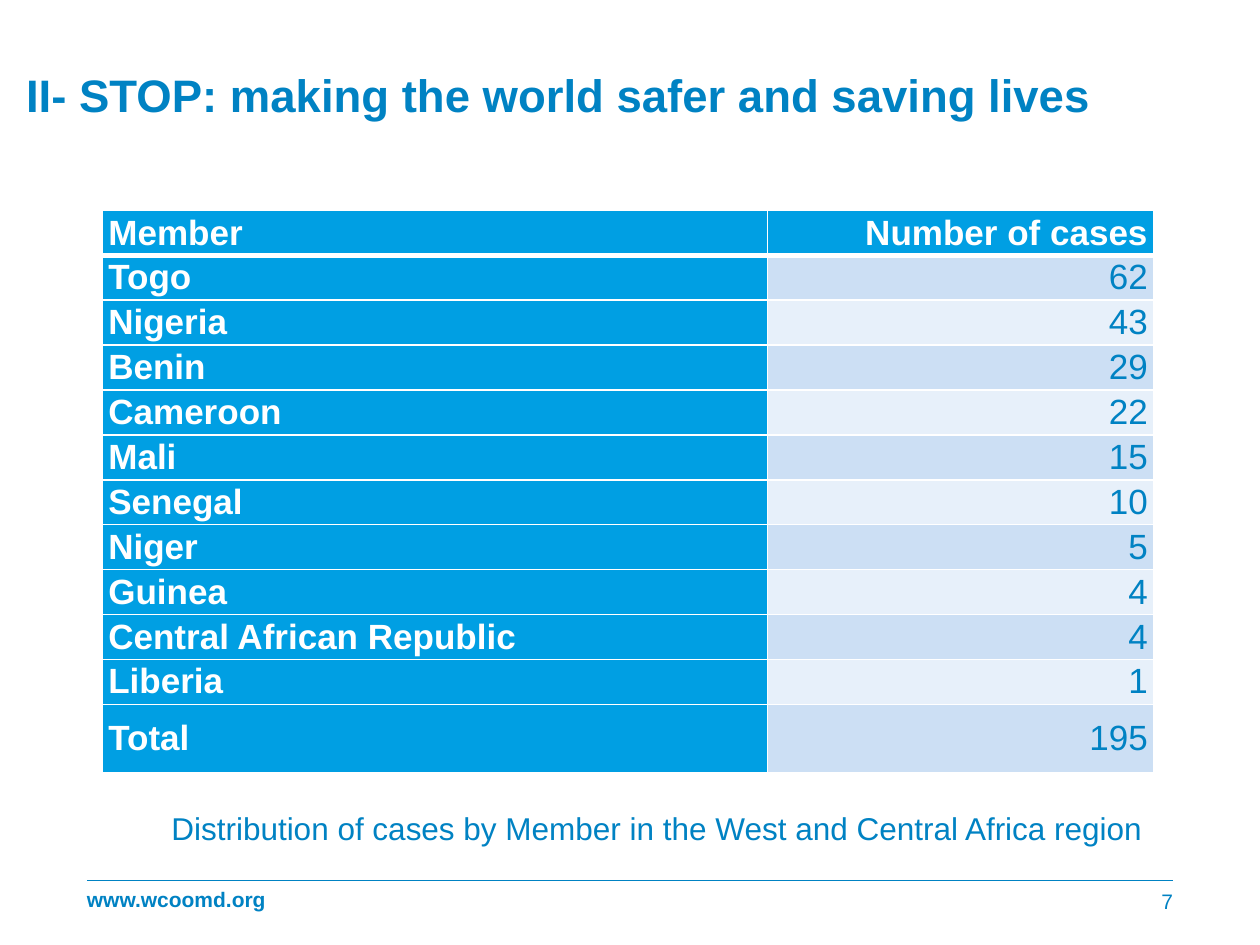
from lxml.etree import SubElement
from pptx import Presentation
from pptx.dml.color import RGBColor
from pptx.enum.shapes import MSO_CONNECTOR
from pptx.enum.text import MSO_ANCHOR, PP_ALIGN
from pptx.oxml import parse_xml
from pptx.oxml.ns import nsdecls, qn
from pptx.util import Inches, Pt

TITLE = "II- STOP: making the world safer and saving lives"
CAPTION = "Distribution of cases by Member in the West and Central Africa region"
WEBSITE = "www.wcoomd.org"
PAGE = "7"
HEADINGS = ("Member", "Number of cases")
CASES = [
    ("Togo", 62),
    ("Nigeria", 43),
    ("Benin", 29),
    ("Cameroon", 22),
    ("Mali", 15),
    ("Senegal", 10),
    ("Niger", 5),
    ("Guinea", 4),
    ("Central African Republic", 4),
    ("Liberia", 1),
]

BLUE = RGBColor(0x00, 0x82, 0xC3)
BRIGHT = RGBColor(0x00, 0x9F, 0xE3)
BAND_DARK = RGBColor(0xCC, 0xDF, 0xF4)
BAND_LIGHT = RGBColor(0xE7, 0xF0, 0xFA)
WHITE = RGBColor(0xFF, 0xFF, 0xFF)

WIDTH, HEIGHT = 10, 7.5
MARGIN = 0.69
FOOTER_TOP, FOOTER_HEIGHT, RULE_TOP = 6.95, 0.4, 6.99
TABLE_LEFT, TABLE_TOP, TABLE_HEIGHT = 0.81, 1.67, 4.46
COLUMNS = (5.28, 3.07)
TOTAL_HEIGHT = 0.54


def write(holder, text, size=12, color=BLUE, bold=False, align=PP_ALIGN.LEFT,
          anchor=MSO_ANCHOR.MIDDLE, insets=(0.1, 0.05, 0.1, 0.05), spacing=None):
    frame = holder.text_frame
    target = frame if hasattr(frame, "margin_left") and not hasattr(holder, "margin_left") else holder
    target.margin_left, target.margin_top, target.margin_right, target.margin_bottom = map(Inches, insets)
    target.vertical_anchor = anchor
    frame.word_wrap = True
    paragraph = frame.paragraphs[0]
    paragraph.alignment = align
    if spacing:
        paragraph.line_spacing = spacing
    run = paragraph.add_run()
    run.text = text
    run.font.name = "Arial"
    run.font.size = Pt(size)
    run.font.bold = bold
    run.font.color.rgb = color


def add_text(slide, box, text, **look):
    write(slide.shapes.add_textbox(*map(Inches, box)), text, **look)


def add_borders(cell, top, bottom):
    properties = cell._tc.get_or_add_tcPr()
    for position, (side, points) in enumerate((("L", 1), ("R", 1), ("T", top), ("B", bottom))):
        properties.insert(position, parse_xml(
            f'<a:ln{side} {nsdecls("a")} w="{Pt(points)}"><a:solidFill>'
            f'<a:srgbClr val="{WHITE}"/></a:solidFill></a:ln{side}>'))


def add_case_table(slide):
    rows = [HEADINGS, *CASES, ("Total", sum(count for _, count in CASES))]
    table = slide.shapes.add_table(
        len(rows), len(COLUMNS), Inches(TABLE_LEFT), Inches(TABLE_TOP),
        Inches(sum(COLUMNS)), Inches(TABLE_HEIGHT)).table
    for column, width in zip(table.columns, COLUMNS):
        column.width = Inches(width)
    row_height = (TABLE_HEIGHT - TOTAL_HEIGHT) / (len(rows) - 1)
    for r, values in enumerate(rows):
        table.rows[r].height = Inches(TOTAL_HEIGHT if r == len(rows) - 1 else row_height)
        for c, value in enumerate(values):
            cell = table.cell(r, c)
            heading = r == 0 or c == 0
            cell.fill.solid()
            cell.fill.fore_color.rgb = BRIGHT if heading else BAND_DARK if r % 2 else BAND_LIGHT
            add_borders(cell, top=3 if r == 1 else 1, bottom=3 if r == 0 else 1)
            write(cell, str(value), size=20, bold=heading, color=WHITE if heading else BLUE,
                  align=PP_ALIGN.RIGHT if c else PP_ALIGN.LEFT, insets=(0.05, 0, 0.05, 0))


def add_footer(slide):
    rule = slide.shapes.add_connector(
        MSO_CONNECTOR.STRAIGHT, Inches(MARGIN), Inches(RULE_TOP),
        Inches(WIDTH - MARGIN), Inches(RULE_TOP))
    rule.line.color.rgb = BLUE
    rule.line.width = Pt(0.5)
    SubElement(rule._element.spPr, qn("a:effectLst"))
    add_text(slide, (MARGIN, FOOTER_TOP, 1.46, FOOTER_HEIGHT), WEBSITE, bold=True,
             insets=(0, 0.05, 0, 0.05), spacing=0.9)
    page_width = 0.64
    add_text(slide, (WIDTH - MARGIN - page_width, FOOTER_TOP, page_width, FOOTER_HEIGHT), PAGE,
             align=PP_ALIGN.RIGHT, insets=(0.1, 0.05, 0, 0.05))


def main():
    deck = Presentation()
    deck.slide_width, deck.slide_height = Inches(WIDTH), Inches(HEIGHT)
    slide = deck.slides.add_slide(deck.slide_layouts[5])
    title = slide.shapes.title
    title.left, title.top, title.width, title.height = map(Inches, (0.06, 0.51, 8.75, 0.88))
    write(title, TITLE, size=26, bold=True, align=PP_ALIGN.CENTER, anchor=MSO_ANCHOR.TOP,
          insets=(0.1, 0.07, 0.1, 0.05), spacing=0.9)
    add_footer(slide)
    add_text(slide, (-0.24, 6.37, 9.78, 0.4), CAPTION, size=18, anchor=MSO_ANCHOR.TOP,
             insets=(1.6, 0.05, 0.1, 0.05))
    add_case_table(slide)
    deck.save("out.pptx")


if __name__ == "__main__":
    main()
